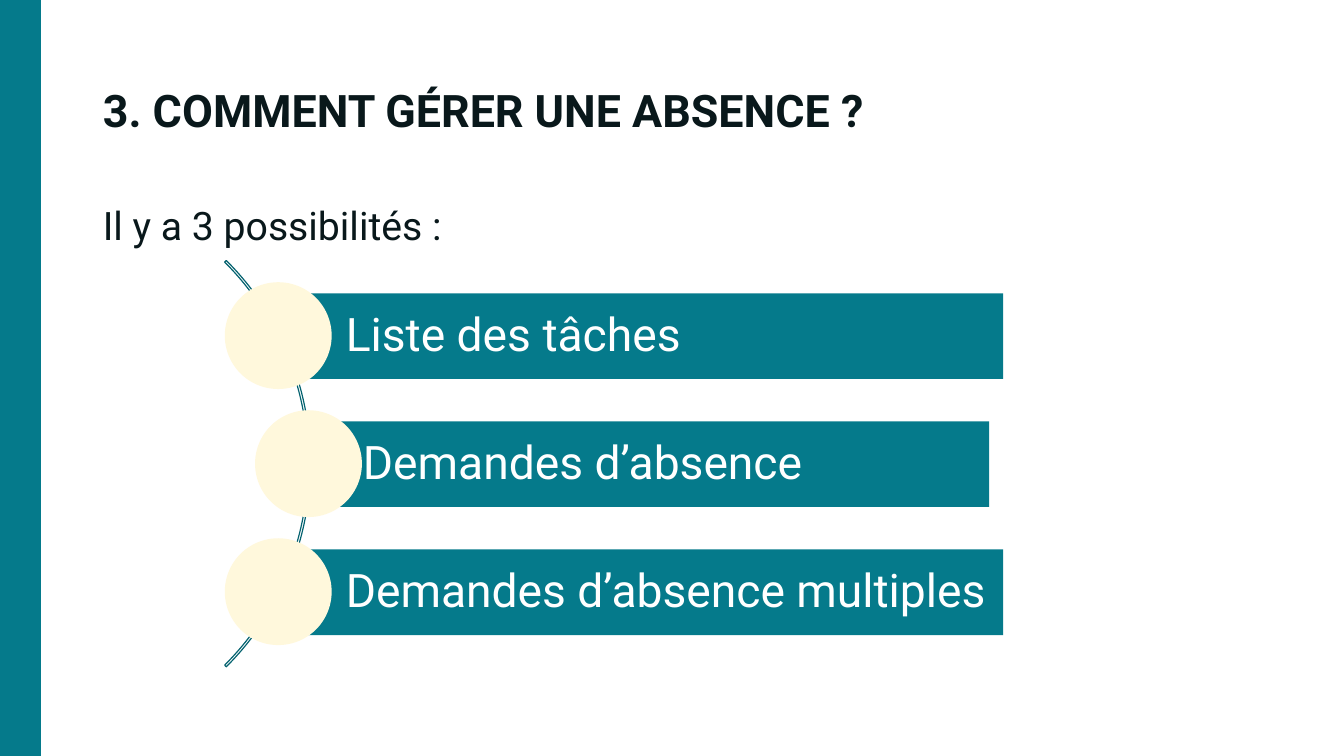
from lxml import etree
from pptx import Presentation
from pptx import util as u
from pptx.dml.color import RGBColor
from pptx.enum import shapes, text
from pptx.oxml import ns

COLORS = {"teal": "057A8B", "arc": "04626F", "cream": "FFF8DC",
          "ink": "09181B", "white": "FFFFFF"}
FONT = "Roboto"
ITEMS = ["Liste des tâches", "Demandes d’absence", "Demandes d’absence multiples"]


def rgb(name):
    """Return the named colour."""
    return RGBColor.from_string(COLORS[name])


def place(shape, left, top, width, height):
    """Move and size a shape in inches."""
    shape.left, shape.top = u.Inches(left), u.Inches(top)
    shape.width, shape.height = u.Inches(width), u.Inches(height)


def write(shape, words, size, color="ink", bold=False, left=0.1,
          anchor=text.MSO_ANCHOR.MIDDLE):
    """Fill a shape with one formatted line of text."""
    frame = shape.text_frame
    frame.word_wrap = True
    frame.auto_size = text.MSO_AUTO_SIZE.NONE
    frame.vertical_anchor = anchor
    frame.margin_left = u.Inches(left)
    para = frame.paragraphs[0]
    para.text = words
    para.alignment = text.PP_ALIGN.LEFT
    para.line_spacing = 0.9
    para.space_before = u.Pt(0)
    font = para.runs[0].font
    font.name, font.size, font.bold = FONT, u.Pt(size), bold
    font.color.rgb = rgb(color)


def draw(slide, kind, box, fill=None, line=None):
    """Add a preset shape with plain fill and line."""
    shape = slide.shapes.add_shape(kind, *map(u.Inches, box))
    shape.shadow.inherit = False
    if fill:
        shape.fill.solid()
        shape.fill.fore_color.rgb = rgb(fill)
    else:
        shape.fill.background()
    if line:
        shape.line.color.rgb = rgb(line)
        shape.line.width = u.Pt(0.85)
    else:
        shape.line.fill.background()
    return shape


def stripe(slide):
    """Add the thick line along the left edge."""
    line = slide.shapes.add_connector(
        shapes.MSO_CONNECTOR.STRAIGHT, u.Inches(0.2), u.Inches(0),
        u.Inches(0.2), u.Inches(7.5))
    line.line.color.rgb = rgb("teal")
    line.line.width = u.Pt(30)
    etree.SubElement(line._element.spPr, ns.qn("a:effectLst"))


def heads(slide):
    """Fill the title and body placeholders."""
    title, body = slide.shapes.title, slide.placeholders[1]
    place(title, 0.92, 0.4, 11.5, 1.45)
    write(title, "3. COMMENT GÉRER UNE ABSENCE\u00a0?".replace("\u00a0", " "), 32, bold=True)
    place(body, 0.92, 2, 11.5, 4.32)
    props = body.text_frame.paragraphs[0]._p.get_or_add_pPr()
    props.set("marL", "0")
    props.set("indent", "0")
    etree.SubElement(props, ns.qn("a:buNone"))
    write(body, "Il y a 3 possibilités :", 28, anchor=text.MSO_ANCHOR.TOP)


def choices(slide):
    """Add the arc with a bar and a disc for each item."""
    kind = shapes.MSO_SHAPE
    arc = draw(slide, kind.BLOCK_ARC, (-2.62, 1.75, 5.7, 5.7), line="arc")
    for i, value in enumerate((189, 27, 0.004)):
        arc.adjustments[i] = value
    for i, words in enumerate(ITEMS):
        mid = 3.33 + 1.27 * i
        start, disc, width = (2.93, 2.53, 6.88) if i == 1 else (2.76, 2.23, 7.19)
        bar = draw(slide, kind.RECTANGLE, (start, mid - 0.42, width, 0.85), "teal")
        write(bar, words, 33, "white", left=0.67)
        draw(slide, kind.OVAL, (disc, mid - 0.53, 1.06, 1.06), "cream")


def main():
    """Build and save the slide."""
    deck = Presentation()
    deck.slide_width, deck.slide_height = u.Inches(13.33), u.Inches(7.5)
    slide = deck.slides.add_slide(deck.slide_layouts[1])
    stripe(slide)
    heads(slide)
    choices(slide)
    deck.save("out.pptx")


if __name__ == "__main__":
    main()
